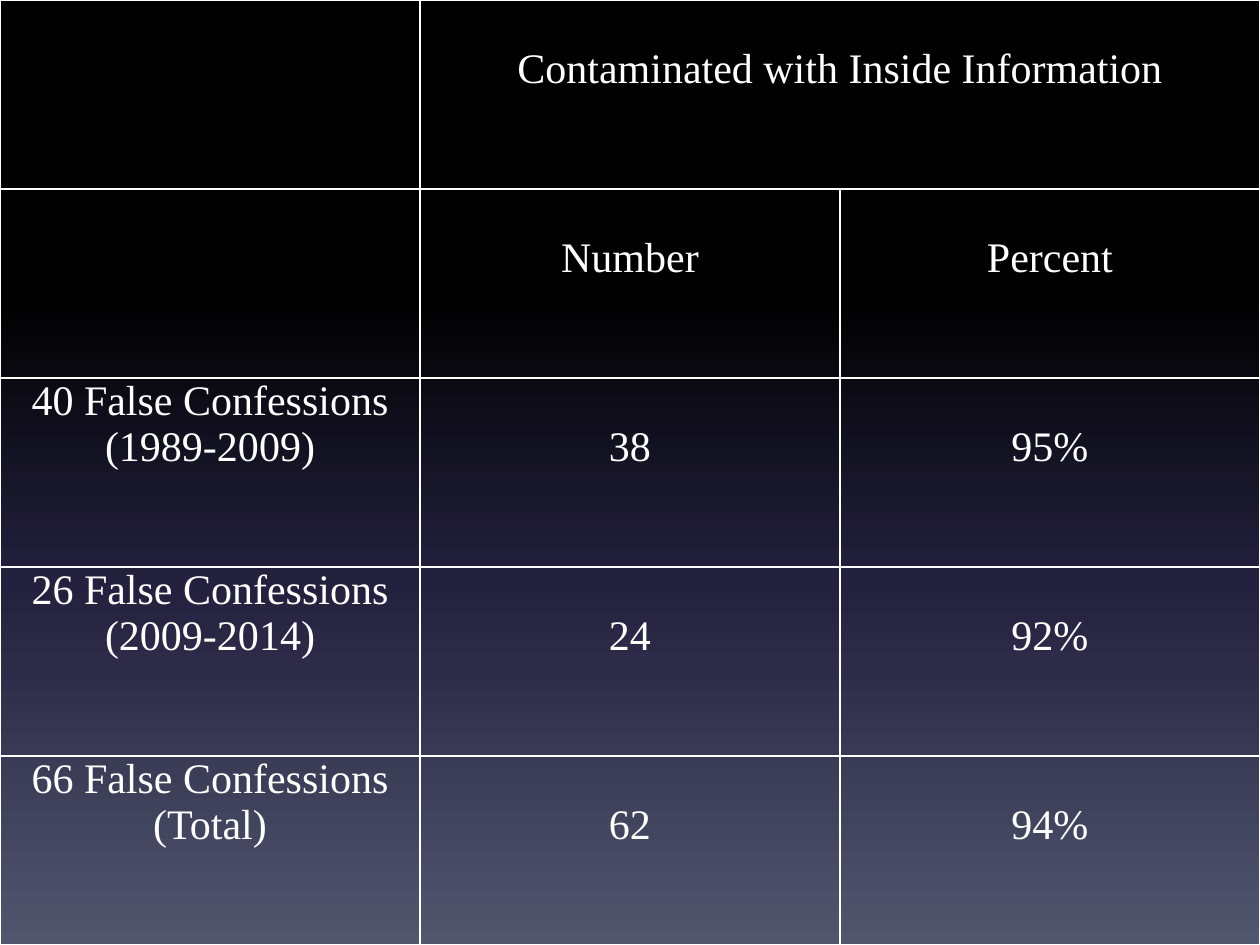
from typing import NamedTuple

from lxml.etree import SubElement as Sub
from pptx import Presentation
from pptx.dml.color import RGBColor
from pptx.enum.text import MSO_ANCHOR as Anchor, PP_ALIGN as Align
from pptx.oxml.ns import qn
from pptx.slide import Slide
from pptx.table import _Cell as Cell
from pptx.util import Inches, Pt

WHITE = RGBColor(0xFF, 0xFF, 0xFF)
BLACK = RGBColor(0x00, 0x00, 0x00)
NAVY = RGBColor(0x24, 0x21, 0x3E)
SLATE = RGBColor(0x51, 0x56, 0x6D)
FONT = "Times New Roman"
SIDES = ("a:lnL", "a:lnR", "a:lnT", "a:lnB")
LINE = 0.37  # height of one text line; most cells start one line down


class Stop(NamedTuple):
    percent: int
    color: RGBColor


class Row(NamedTuple):
    label: str
    number: str
    percent: str


STOPS = [Stop(0, BLACK), Stop(31, BLACK), Stop(62, NAVY), Stop(100, SLATE)]
ROWS = [
    Row("", "Contaminated with Inside Information", ""),
    Row("", "Number", "Percent"),
    Row("40 False Confessions (1989-2009)", "38", "95%"),
    Row("26 False Confessions (2009-2014)", "24", "92%"),
    Row("66 False Confessions (Total)", "62", "94%"),
]


def paint_back(slide: Slide, stops: list[Stop]) -> None:
    """Fill the background with a gradient that runs from top to bottom."""
    fill = slide.background.fill
    fill.gradient()
    fill.gradient_angle = 270
    items = slide.element.find(f".//{qn('a:gsLst')}")
    for item in list(items):
        items.remove(item)
    for stop in stops:
        item = Sub(items, qn("a:gs"), pos=str(stop.percent * 1000))
        Sub(item, qn("a:srgbClr"), val=str(stop.color))


def add_edges(cell: Cell, color: RGBColor) -> None:
    props = cell._tc.get_or_add_tcPr()
    for side in SIDES:
        edge = Sub(props, qn(side), w=str(Pt(1)))
        fill = Sub(edge, qn("a:solidFill"))
        Sub(fill, qn("a:srgbClr"), val=str(color))


def fill_cell(cell: Cell, text: str, top: float) -> None:
    add_edges(cell, WHITE)
    cell.fill.background()
    cell.margin_left = cell.margin_right = Inches(0.07)
    cell.margin_top, cell.margin_bottom = Inches(top), Inches(0)
    cell.vertical_anchor = Anchor.TOP
    cell.text_frame.text = text
    para = cell.text_frame.paragraphs[0]
    para.alignment = Align.CENTER
    for run in para.runs:
        run.font.name = FONT
        run.font.size = Pt(24)
        run.font.bold = False
        run.font.color.rgb = WHITE


def add_grid(slide: Slide, rows: list[Row], width: int, height: int) -> None:
    count = len(Row._fields)
    table = slide.shapes.add_table(len(rows), count, 0, 0, width, height).table
    table.first_row = table.horz_banding = False
    for i, row in enumerate(rows):
        for j, text in enumerate(row):
            fill_cell(table.cell(i, j), text, LINE if j else 0)
    table.cell(0, 1).merge(table.cell(0, 2))


def main() -> None:
    deck = Presentation()
    deck.slide_width, deck.slide_height = Inches(10), Inches(7.5)
    slide = deck.slides.add_slide(deck.slide_layouts[6])
    paint_back(slide, STOPS)
    add_grid(slide, ROWS, deck.slide_width, deck.slide_height)
    deck.save("out.pptx")


if __name__ == "__main__":
    main()
